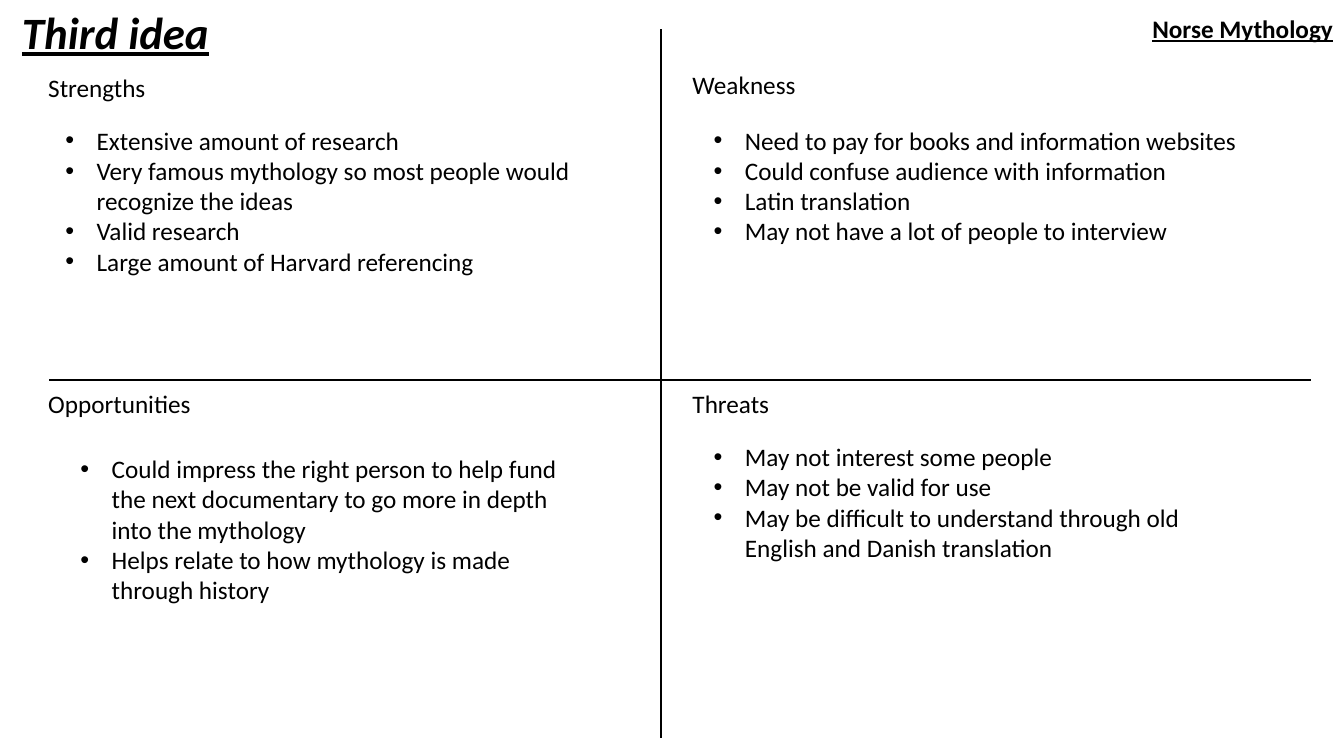
"""Build a SWOT slide for the third documentary idea, Norse mythology."""
import pptx
import pptx.dml.color
import pptx.enum.shapes
import pptx.enum.text
import pptx.oxml.ns
import pptx.util
from lxml import etree

Inches = pptx.util.Inches
COLORS = {"ink": "000000", "paper": "FFFFFF"}
INK = pptx.dml.color.RGBColor.from_string(COLORS["ink"])
BULLET_INDENT = Inches(0.31)

deck = pptx.Presentation()
deck.slide_width = Inches(13.33)
deck.slide_height = Inches(7.5)
slide = deck.slides.add_slide(deck.slide_layouts[6])
slide.background.fill.solid()
slide.background.fill.fore_color.rgb = pptx.dml.color.RGBColor.from_string(COLORS["paper"])


def add_text(box, text, size=18, wrap=False, bold=None, italic=None, underline=None):
    """Add a text box and return its paragraphs."""
    frame = slide.shapes.add_textbox(*map(Inches, box)).text_frame
    frame.word_wrap = wrap
    frame.auto_size = pptx.enum.text.MSO_AUTO_SIZE.SHAPE_TO_FIT_TEXT
    frame.text = text
    for paragraph in frame.paragraphs:
        for run in paragraph.runs:
            run.font.name = "Calibri"
            run.font.size = pptx.util.Pt(size)
            run.font.color.rgb = INK
            run.font.bold = bold
            run.font.italic = italic
            run.font.underline = underline
    return frame.paragraphs


add_text((0.12, 0, 2.06, 0.64), "Third idea", size=32, wrap=True,
         bold=True, italic=True, underline=True)

dividers = [(6.56, 0.29, 6.56, 7.32), (0.49, 3.77, 13, 3.77)]
for ends in dividers:
    divider = slide.shapes.add_connector(
        pptx.enum.shapes.MSO_CONNECTOR.STRAIGHT, *map(Inches, ends))
    divider.line.color.rgb = INK
    divider.line.width = pptx.util.Pt(1.5)
    etree.SubElement(divider._element.spPr, pptx.oxml.ns.qn("a:effectLst"))

add_text((11.33, 0.08, 2.01, 0.4), "Norse Mythology", bold=True, underline=True)

quadrants = [
    ("Strengths", (0.38, 0.67, 1.18, 0.4), (0.55, 1.19, 5.58, 1.92), [
        "Extensive amount of research",
        "Very famous mythology so most people would recognize the ideas",
        "Valid research",
        "Large amount of Harvard referencing",
    ]),
    ("Weakness", (6.77, 0.64, 1.23, 0.4), (6.98, 1.19, 5.8, 1.31), [
        "Need to pay for books and information websites",
        "Could confuse audience with information",
        "Latin translation",
        "May not have a lot of people to interview",
    ]),
    ("Opportunities", (0.38, 3.8, 1.69, 0.4), (0.7, 4.45, 5.2, 1.92), [
        "Could impress the right person to help fund the next documentary "
        "to go more in depth into the mythology",
        "Helps relate to how mythology is made through history",
    ]),
    ("Threats", (6.77, 3.8, 0.97, 0.4), (6.98, 4.33, 5.41, 1.31), [
        "May not interest some people",
        "May not be valid for use",
        "May be difficult to understand through old English and Danish translation",
    ]),
]
for heading, heading_box, points_box, points in quadrants:
    add_text(heading_box, heading)
    for point in add_text(points_box, "\n".join(points), wrap=True):
        properties = point._p.get_or_add_pPr()
        properties.set("marL", str(BULLET_INDENT))
        properties.set("indent", str(-BULLET_INDENT))
        etree.SubElement(properties, pptx.oxml.ns.qn("a:buFont"), typeface="Arial")
        etree.SubElement(properties, pptx.oxml.ns.qn("a:buChar"), char="•")

deck.save("out.pptx")
